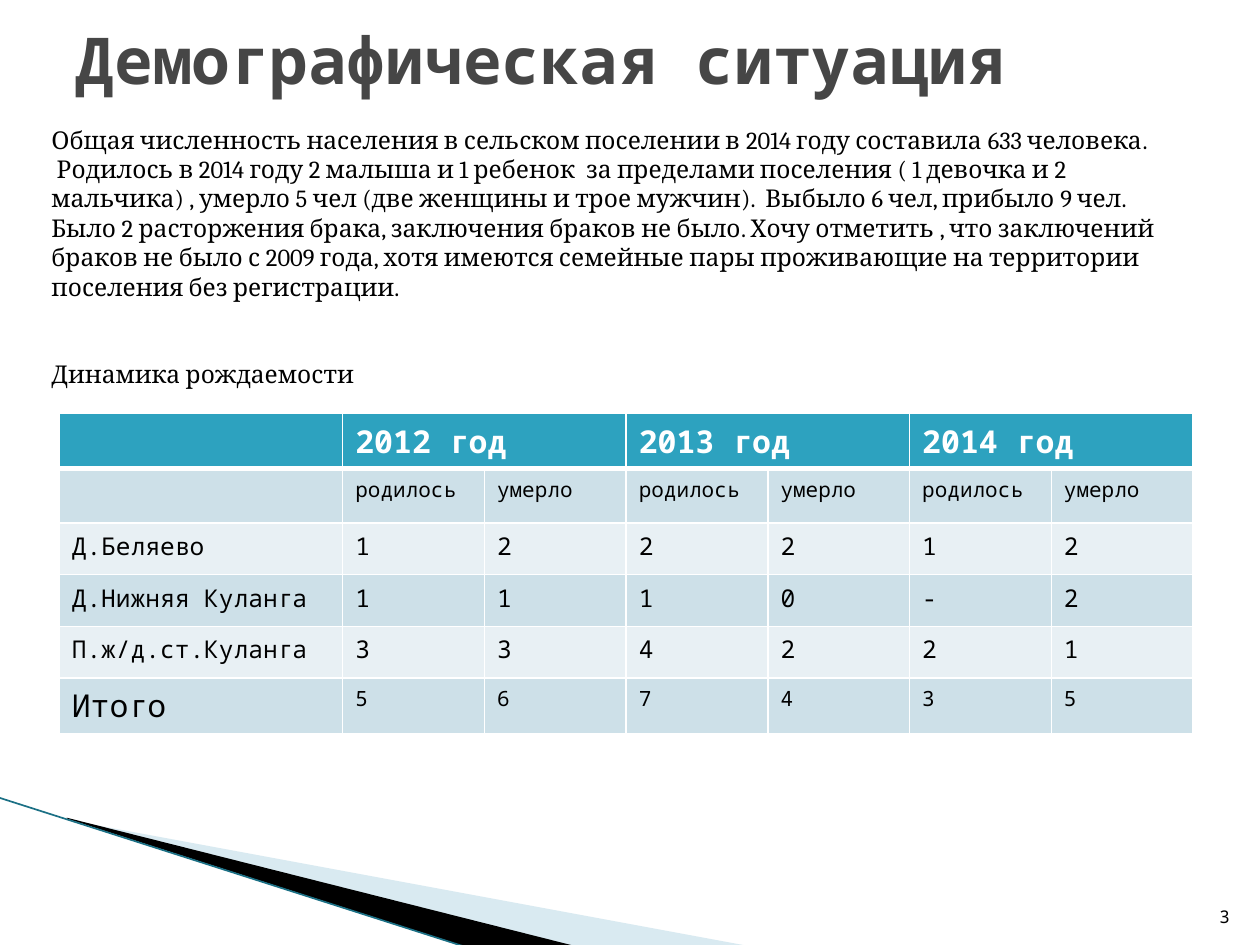
from lxml.etree import SubElement
from pptx import Presentation
from pptx.dml.color import RGBColor
from pptx.enum.shapes import MSO_CONNECTOR
from pptx.enum.text import MSO_ANCHOR, PP_ALIGN
from pptx.oxml.ns import qn
from pptx.util import Inches, Pt

WIDE, HIGH = Inches(10), Inches(7.5)
MONO, SERIF = "Noto Sans Mono", "Cambria"
WHITE = RGBColor(0xFF, 0xFF, 0xFF)
BLACK = RGBColor(0, 0, 0)
GREY = RGBColor(0x46, 0x46, 0x46)
TEAL = RGBColor(0x2D, 0xA2, 0xBF)
DEEP = RGBColor(0x1B, 0x70, 0x85)
PALE = RGBColor(0xA0, 0xCB, 0xDC)
BAND = RGBColor(0xCD, 0xE0, 0xE8)
LIGHT = RGBColor(0xE8, 0xF0, 0xF4)

TITLE = "Демографическая ситуация"
# Each paragraph with its space before
BODY = [
    ("Общая численность населения в сельском поселении в 2014 году "
     "составила 633 человека.", 0),
    (" Родилось в 2014 году 2 малыша и 1 ребенок  за пределами поселения "
     "( 1 девочка и 2 мальчика) , умерло 5 чел (две женщины и трое мужчин).  "
     "Выбыло 6 чел, прибыло 9 чел.", 0),
    ("Было 2 расторжения брака, заключения браков не было. Хочу отметить , "
     "что заключений браков не было с 2009 года, хотя имеются семейные пары "
     "проживающие на территории  поселения без регистрации.", 0),
    ("Динамика рождаемости", 33),
]
YEARS = ["2012 год", "2013 год", "2014 год"]
ROWS = [
    [""] + ["родилось", "умерло"] * len(YEARS),
    ["Д.Беляево", "1", "2", "2", "2", "1", "2"],
    ["Д.Нижняя Куланга", "1", "1", "1", "0", "-", "2"],
    ["П.ж/д.ст.Куланга", "3", "3", "4", "2", "2", "1"],
    ["Итого", "5", "6", "7", "4", "3", "5"],
]
# Sizes of the first cell and of the others, row by row
SIZES = [(12, 12), (14, 14), (14, 14), (14, 14), (18, 12)]


def spot(x, y):
    """Turn percent of the slide into a point."""
    return round(WIDE * x / 100), round(HIGH * y / 100)


def area(x, y, w, h):
    return spot(x, y) + spot(w, h)


def write(para, text, size, face, color, bold=False):
    run = para.add_run()
    run.text = text
    font = run.font
    font.size, font.name, font.bold = Pt(size), face, bold
    font.color.rgb = color


def add_box(slide, place, anchor):
    frame = slide.shapes.add_textbox(*area(*place)).text_frame
    frame.word_wrap = True
    frame.vertical_anchor = anchor
    return frame


def add_wedge(slide, points, color, alpha=None):
    first, *rest = [spot(*p) for p in points]
    pen = slide.shapes.build_freeform(*first)
    pen.add_line_segments(rest, close=True)
    shape = pen.convert_to_shape()
    shape.shadow.inherit = False
    shape.line.fill.background()
    shape.fill.solid()
    shape.fill.fore_color.rgb = color
    if alpha:
        tint = shape.fill._xPr.find(f".//{qn('a:srgbClr')}")
        SubElement(tint, qn("a:alpha"), val=str(alpha * 1000))


def add_edge(slide, start, end):
    line = slide.shapes.add_connector(
        MSO_CONNECTOR.STRAIGHT, *spot(*start), *spot(*end))
    line.line.color.rgb = DEEP
    line.line.width = Pt(0.95)
    SubElement(line._element.spPr, qn("a:effectLst"))


def paint(cell, color, base=1):
    """Set white borders, then the fill."""
    props = cell._tc.get_or_add_tcPr()
    for side, width in (("L", 1), ("R", 1), ("T", 1), ("B", base)):
        edge = SubElement(props, qn(f"a:ln{side}"), w=str(Pt(width)))
        fill = SubElement(edge, qn("a:solidFill"))
        SubElement(fill, qn("a:srgbClr"), val=str(WHITE))
    cell.fill.solid()
    cell.fill.fore_color.rgb = color


def add_grid(slide):
    cols = 1 + 2 * len(YEARS)
    table = slide.shapes.add_table(
        len(ROWS) + 1, cols, *area(4.7, 43.73, 90, 32.8)).table
    for i, col in enumerate(table.columns):
        col.width = WIDE * 9 // (80 if i else 40)
    for i, row in enumerate(table.rows):
        row.height = spot(0, 5.73 if i == 1 else 5.47)[1]

    # Years, each over two columns
    for i in range(cols):
        paint(table.cell(0, i), TEAL, 3)
    for i, year in enumerate(YEARS):
        cell = table.cell(0, 1 + 2 * i)
        cell.merge(table.cell(0, 2 + 2 * i))
        write(cell.text_frame.paragraphs[0], year, 18, MONO, WHITE, True)

    # Banded rows
    for i, (row, sizes) in enumerate(zip(ROWS, SIZES)):
        for j, text in enumerate(row):
            cell = table.cell(i + 1, j)
            paint(cell, LIGHT if i % 2 else BAND)
            if text:
                write(cell.text_frame.paragraphs[0], text,
                      sizes[min(j, 1)], MONO, BLACK)


def set_title(slide):
    title = slide.shapes.title
    title.left, title.top, title.width, title.height = area(5, 4, 90, 13.73)
    frame = title.text_frame
    frame.word_wrap = True
    frame.vertical_anchor = MSO_ANCHOR.MIDDLE
    # The text sits high in its box
    frame.margin_top, frame.margin_bottom = 0, Inches(0.7)
    para = frame.paragraphs[0]
    para.alignment = PP_ALIGN.LEFT
    write(para, TITLE, 36.9, MONO, GREY, True)


def add_body(slide):
    frame = add_box(slide, (3.1, 12.53, 93, 38.53), MSO_ANCHOR.TOP)
    for i, (text, gap) in enumerate(BODY):
        para = frame.add_paragraph() if i else frame.paragraphs[0]
        if gap:
            para.space_before = Pt(gap)
        write(para, text, 14, SERIF, BLACK)


def add_number(slide):
    frame = add_box(slide, (94.6, 93.47, 4, 5.33), MSO_ANCHOR.BOTTOM)
    para = frame.paragraphs[0]
    para.alignment = PP_ALIGN.RIGHT
    write(para, "3", 10, MONO, BLACK)


def main():
    deck = Presentation()
    deck.slide_width, deck.slide_height = WIDE, HIGH
    slide = deck.slides.add_slide(deck.slide_layouts[5])

    # Corner wedges
    add_wedge(slide, [(5.5, 86.8), (59.5, 100.13), (45.6, 100.13),
                      (5.5, 86.67)], PALE, 40)
    add_wedge(slide, [(5.3, 86.53), (45.7, 100.13), (37.2, 100.27),
                      (5.4, 86.67)], BLACK)
    add_edge(slide, (-0.1, 84.4), (37.1, 100.27))

    # Content
    add_grid(slide)
    add_number(slide)
    set_title(slide)
    add_body(slide)
    deck.save("out.pptx")


if __name__ == "__main__":
    main()
